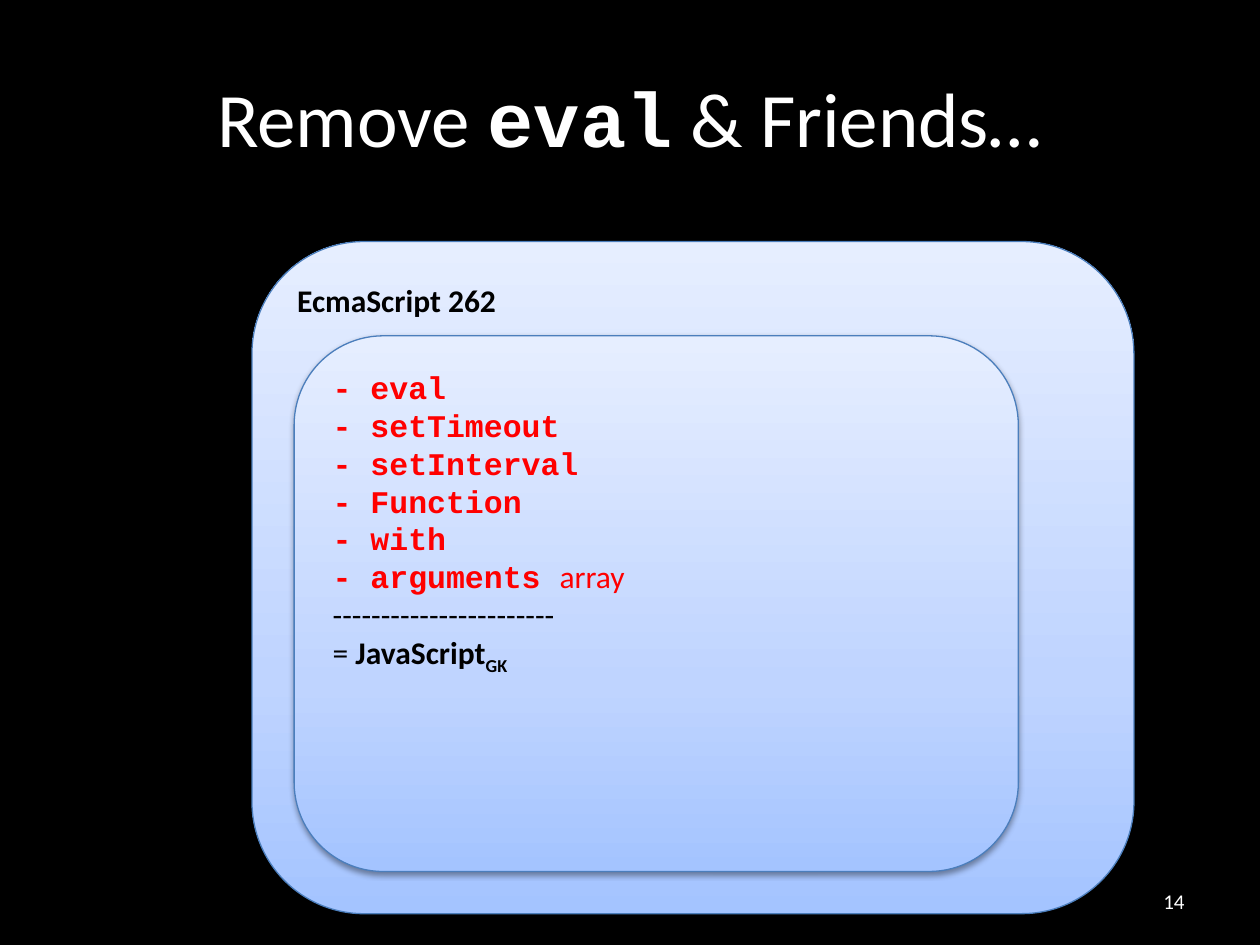
from copy import deepcopy
from dataclasses import dataclass

from lxml.etree import SubElement
from pptx import Presentation
from pptx.dml.color import RGBColor
from pptx.enum.shapes import MSO_SHAPE
from pptx.enum.text import MSO_ANCHOR, PP_ALIGN
from pptx.oxml.ns import qn
from pptx.slide import Slide
from pptx.text.text import TextFrame
from pptx.util import Cm, Pt

HUES = {
    "back": "000000", "white": "FFFFFF", "black": "000000", "red": "FF0000",
    "edge": "4B7EBC", "low": "A4C4FF", "mid": "BFD4FF", "high": "E6EEFF",
}
STOPS = [(0, "low"), (0.35, "mid"), (1, "high")]
SANS, MONO = "Calibri", "Courier New"


@dataclass
class Box:
    """Place of an item, in centimetres."""
    left: float
    top: float
    width: float
    height: float

    def place(self) -> list[Cm]:
        """Return the four lengths."""
        return [Cm(n) for n in (self.left, self.top, self.width, self.height)]


@dataclass
class Run:
    """Piece of text with its own look."""
    text: str
    font: str = SANS
    bold: bool = False
    hue: str = "black"
    base: int = 0


def hue(name: str) -> RGBColor:
    """Return a named colour."""
    return RGBColor.from_string(HUES[name])


def write(frame: TextFrame, text: list[list[Run]], *, size: float,
          align: PP_ALIGN = PP_ALIGN.LEFT,
          anchor: MSO_ANCHOR = MSO_ANCHOR.MIDDLE) -> None:
    """Fill a frame with lines of runs."""
    frame.word_wrap = True
    frame.vertical_anchor = anchor
    for i, line in enumerate(text):
        para = frame.add_paragraph() if i else frame.paragraphs[0]
        para.alignment = align
        for part in line:
            run = para.add_run()
            run.text = part.text
            run.font.name = part.font
            run.font.size = Pt(size)
            run.font.bold = part.bold
            run.font.color.rgb = hue(part.hue)
            if part.base:
                run.font._element.set("baseline", str(part.base * 1000))


def label(slide: Slide, box: Box, line: list[Run], size: float,
          align: PP_ALIGN) -> None:
    """Add a line of plain text."""
    frame = slide.shapes.add_textbox(*box.place()).text_frame
    write(frame, [line], size=size, align=align)


def panel(slide: Slide, box: Box, text: list[list[Run]]) -> None:
    """Add a rounded panel with a gradient and a soft shadow."""
    shape = slide.shapes.add_shape(MSO_SHAPE.ROUNDED_RECTANGLE, *box.place())
    shape.line.color.rgb = hue("edge")
    shape.line.width = Pt(0.75)
    shape.fill.gradient()
    shape.fill.gradient_angle = 90
    props = shape._element.spPr
    stops = props.find(".//" + qn("a:gsLst"))
    stops.append(deepcopy(stops[0]))
    for stop, (spot, name) in zip(shape.fill.gradient_stops, STOPS):
        stop.position = spot
        stop.color.rgb = hue(name)
    shape.shadow.inherit = False
    shade = SubElement(props.find(qn("a:effectLst")), qn("a:outerShdw"),
                       blurRad=str(Pt(3.1)), dist=str(Pt(1.6)),
                       dir="5400000", rotWithShape="0")
    tint = SubElement(shade, qn("a:srgbClr"), val=HUES["black"])
    SubElement(tint, qn("a:alpha"), val="38000")
    write(shape.text_frame, text, size=18, anchor=MSO_ANCHOR.TOP)


def main() -> None:
    """Build the slide and save it."""
    deck = Presentation()
    deck.slide_width, deck.slide_height = Cm(25.4), Cm(19.05)
    slide = deck.slides.add_slide(deck.slide_layouts[6])
    slide.background.fill.solid()
    slide.background.fill.fore_color.rgb = hue("back")

    title = [Run("Remove ", hue="white"), Run("eval", MONO, True, "white"),
             Run(" & Friends…", hue="white")]
    label(slide, Box(1.27, 0.76, 22.86, 3.18), title, 44, PP_ALIGN.CENTER)
    label(slide, Box(18.21, 17.65, 5.92, 1.02), [Run("14", hue="white")], 12,
          PP_ALIGN.RIGHT)

    names = ["eval", "setTimeout", "setInterval", "Function", "with",
             "arguments "]
    lines = [[Run(f"- {name}", MONO, True, "red")] for name in names]
    lines[-1].append(Run("array", hue="red"))
    lines.append([Run("-----------------------")])
    lines.append([Run("= "), Run("JavaScript", bold=True),
                  Run("GK", bold=True, base=-25)])
    panel(slide, Box(5.08, 4.87, 17.78, 13.55),
          [[Run("EcmaScript 262", bold=True)]])
    panel(slide, Box(5.93, 6.77, 14.6, 10.8), lines)
    deck.save("out.pptx")


if __name__ == "__main__":
    main()
